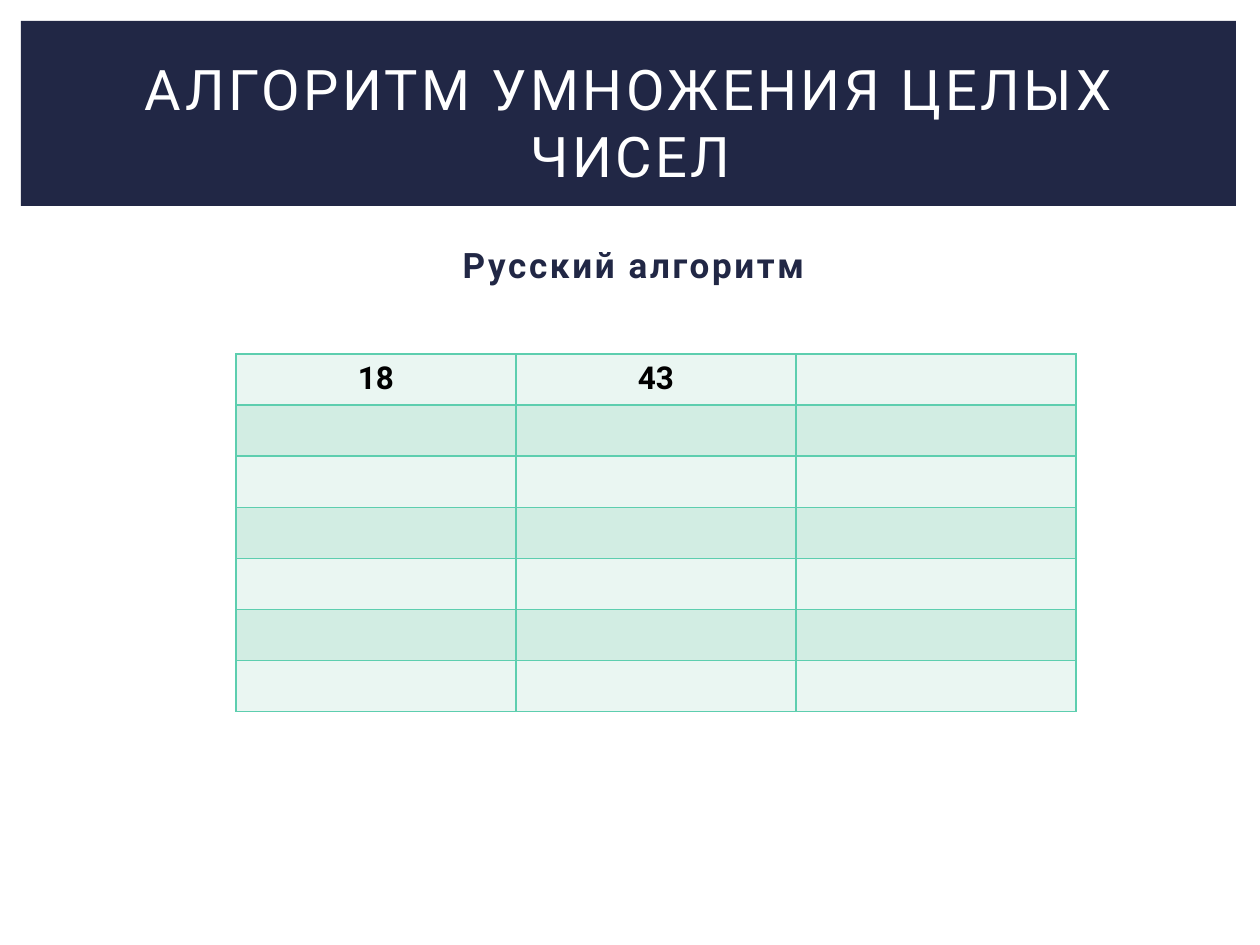
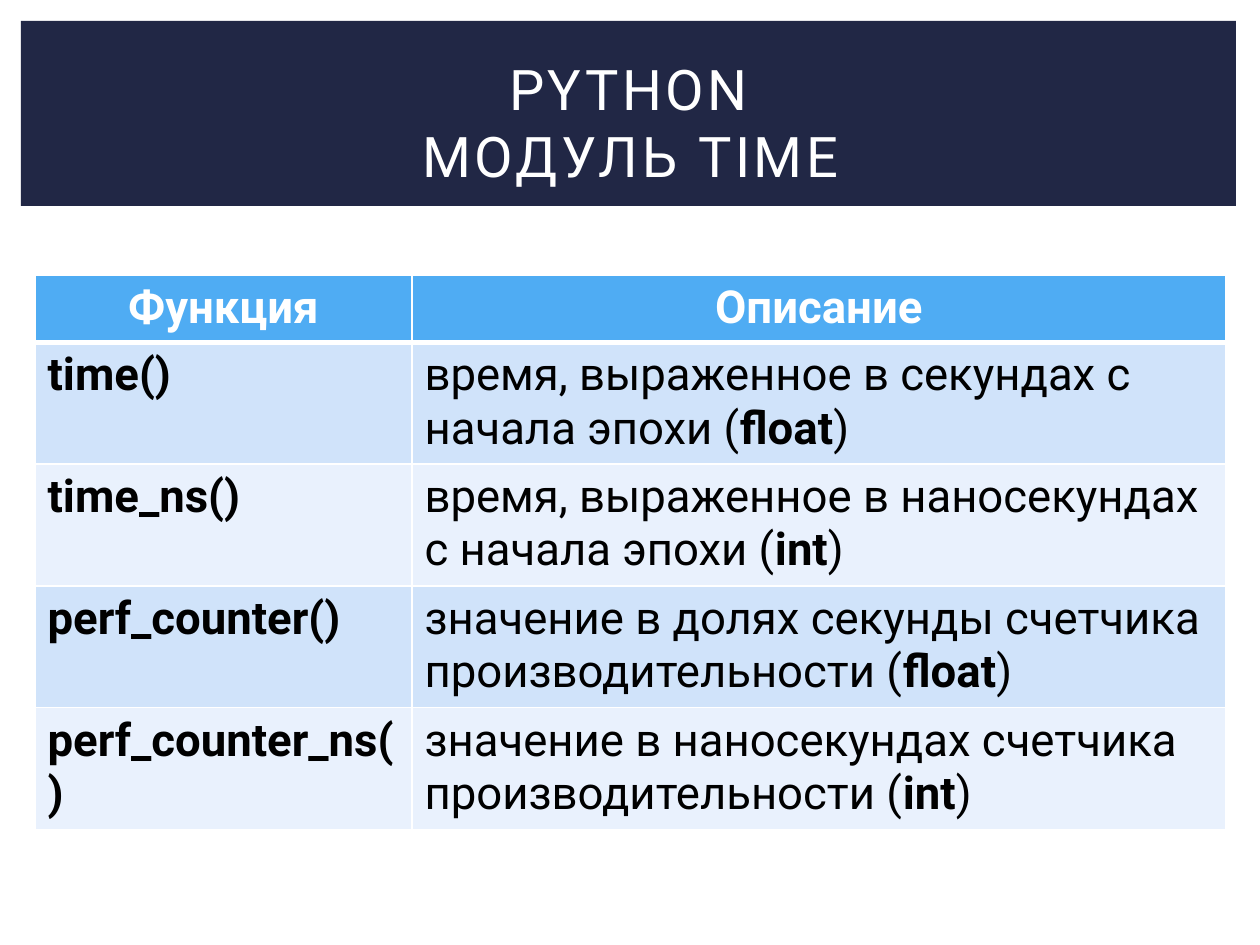
"""Builds two slides: a multiplication worksheet and a table of time functions."""
from dataclasses import dataclass
from typing import NamedTuple

from lxml import etree
from pptx import Presentation
from pptx.dml.color import RGBColor
from pptx.enum.shapes import MSO_SHAPE
from pptx.enum.text import MSO_ANCHOR, PP_ALIGN
from pptx.oxml.ns import qn
from pptx.util import Emu, Pt

RECTANGLE = MSO_SHAPE.RECTANGLE
TOP, MIDDLE = MSO_ANCHOR.TOP, MSO_ANCHOR.MIDDLE
LEFT, CENTER = PP_ALIGN.LEFT, PP_ALIGN.CENTER

EMU_PER_PX = 914400 / 126
FONT = "Roboto"
BLANK_LAYOUT = 6
COLORS = {
    "navy": "212745",
    "white": "FFFFFF",
    "black": "000000",
    "mint_line": "5DCEAF",
    "mint_light": "EAF6F2",
    "mint_dark": "D2EDE3",
    "blue_head": "4FACF3",
    "blue_light": "E9F1FD",
    "blue_dark": "D0E3FA",
}


class Box(NamedTuple):
    """Place and size in px."""

    left: int
    top: int
    width: int
    height: int


class Span(NamedTuple):
    """Piece of text with one weight."""

    text: str
    bold: bool = False


@dataclass(frozen=True)
class TextStyle:
    """Look of a paragraph, with letter spacing in hundredths of a point."""

    size: int
    color: str
    align: int = LEFT
    spacing: int = 0


@dataclass(frozen=True)
class TableLook:
    """Colours and text styles of a table."""

    border: str
    header_fill: str
    band_fills: tuple[str, str]
    header_text: TextStyle
    body_text: TextStyle
    header_rule: int = 1


BAND = Box(21, 21, 1215, 185)
TITLE = Box(53, 49, 1155, 145)
SUBTITLE = Box(53, 237, 1155, 607)
WORKSHEET = Box(236, 354, 840, 358)
FUNCTIONS = Box(35, 275, 1191, 541)

TITLE_STYLE = TextStyle(32, "white", CENTER, 200)
SUBTITLE_STYLE = TextStyle(20, "navy", CENTER, 150)
NUMBER_STYLE = TextStyle(18, "black", CENTER)
MINT_LOOK = TableLook("mint_line", "mint_light", ("mint_dark", "mint_light"),
                      NUMBER_STYLE, NUMBER_STYLE)
BLUE_LOOK = TableLook("white", "blue_head", ("blue_dark", "blue_light"),
                      TextStyle(26, "white", CENTER), TextStyle(26, "black"), 3)

WORKSHEET_ROWS = 7
FACTORS = ("18", "43", "")
FUNCTION_HEADS = ("Функция", "Описание")
FUNCTION_ROWS = (
    ("time()", "время, выраженное в секундах с начала эпохи (", "float"),
    ("time_ns()", "время, выраженное в наносекундах с начала эпохи (", "int"),
    ("perf_counter()", "значение в долях секунды счетчика производительности (", "float"),
    ("perf_counter_ns()", "значение в наносекундах счетчика производительности (", "int"),
)


def px(length: float) -> Emu:
    """Turn px into EMU."""
    return Emu(round(length * EMU_PER_PX))


def rgb(name: str) -> RGBColor:
    """Look up a named colour."""
    return RGBColor.from_string(COLORS[name])


def write(paragraph, spans: list[Span], style: TextStyle) -> None:
    """Fill a paragraph with styled spans."""
    paragraph.alignment = style.align
    for span in spans:
        run = paragraph.add_run()
        run.text = span.text
        values = {"name": FONT, "size": Pt(style.size), "bold": span.bold}
        for attribute, value in values.items():
            setattr(run.font, attribute, value)
        run.font.color.rgb = rgb(style.color)
        if style.spacing:
            run._r.get_or_add_rPr().set("spc", str(style.spacing))


def add_text(slide, box: Box, lines: list[Span], style: TextStyle, anchor: int):
    """Add a text box with one paragraph and return that paragraph."""
    frame = slide.shapes.add_textbox(*map(px, box)).text_frame
    for attribute, value in {"word_wrap": True, "vertical_anchor": anchor}.items():
        setattr(frame, attribute, value)
    paragraph = frame.paragraphs[0]
    for number, line in enumerate(lines):
        if number:
            paragraph.add_line_break()
        write(paragraph, [line], style)
    return paragraph


def add_titled_slide(deck, *title_lines: str):
    """Add a blank slide with the title band."""
    slide = deck.slides.add_slide(deck.slide_layouts[BLANK_LAYOUT])
    band = slide.shapes.add_shape(RECTANGLE, *map(px, BAND))
    band.shadow.inherit = False
    band.fill.solid()
    band.fill.fore_color.rgb = rgb("navy")
    band.line.fill.background()
    add_text(slide, TITLE, [Span(line) for line in title_lines], TITLE_STYLE, MIDDLE)
    return slide


def set_borders(cell, color: str, top: int, bottom: int) -> None:
    """Draw the four sides of a cell, with widths in points."""
    properties = cell._tc.get_or_add_tcPr()
    for side, width in {"lnL": 1, "lnR": 1, "lnT": top, "lnB": bottom}.items():
        line = etree.SubElement(properties, qn(f"a:{side}"), w=str(Pt(width)))
        fill = etree.SubElement(line, qn("a:solidFill"))
        etree.SubElement(fill, qn("a:srgbClr"), val=COLORS[color])


def add_grid(slide, box: Box, widths: list[float], heights: list[float],
             rows: list[list[list[Span]]], look: TableLook) -> None:
    """Add a table with a header row and banded body rows."""
    table = slide.shapes.add_table(len(heights), len(widths), *map(px, box)).table
    for attribute in ("first_row", "horz_banding"):
        setattr(table, attribute, False)
    for column, width in zip(table.columns, widths):
        column.width = px(width)
    for index, (row, height, contents) in enumerate(zip(table.rows, heights, rows)):
        row.height = px(height)
        fill = look.band_fills[(index - 1) % 2] if index else look.header_fill
        style = look.body_text if index else look.header_text
        top = look.header_rule if index == 1 else 1
        bottom = 1 if index else look.header_rule
        for cell, spans in zip(row.cells, contents):
            set_borders(cell, look.border, top, bottom)
            cell.fill.solid()
            cell.fill.fore_color.rgb = rgb(fill)
            write(cell.text_frame.paragraphs[0], spans, style)


def build_worksheet(deck) -> None:
    """Build the slide with the multiplication worksheet."""
    slide = add_titled_slide(deck, "АЛГОРИТМ УМНОЖЕНИЯ ЦЕЛЫХ ЧИСЕЛ")
    subtitle = add_text(slide, SUBTITLE, [Span("Русский алгоритм", True)],
                        SUBTITLE_STYLE, TOP)
    subtitle.space_before = Pt(4)
    for attribute, indent in {"marL": 38, "indent": -32}.items():
        subtitle._p.get_or_add_pPr().set(attribute, str(px(indent)))
    columns = len(FACTORS)
    factors = [[Span(factor, True)] if factor else [] for factor in FACTORS]
    rows = [factors] + [[[]] * columns] * (WORKSHEET_ROWS - 1)
    add_grid(slide, WORKSHEET, [WORKSHEET.width / columns] * columns,
             [WORKSHEET.height / WORKSHEET_ROWS] * WORKSHEET_ROWS, rows, MINT_LOOK)


def build_functions(deck) -> None:
    """Build the slide with the table of time functions."""
    slide = add_titled_slide(deck, "PYTHON", "МОДУЛЬ TIME")
    rows = [[[Span(head, True)] for head in FUNCTION_HEADS]]
    for function, description, result in FUNCTION_ROWS:
        rows.append([[Span(function, True)],
                     [Span(description), Span(result, True), Span(")")]])
    add_grid(slide, FUNCTIONS, [377, 814], [65] + [119] * len(FUNCTION_ROWS),
             rows, BLUE_LOOK)


def main() -> None:
    """Build and save the slides."""
    deck = Presentation()
    for attribute, length in {"slide_width": 1260, "slide_height": 945}.items():
        setattr(deck, attribute, px(length))
    build_worksheet(deck)
    build_functions(deck)
    deck.save("out.pptx")


if __name__ == "__main__":
    main()
